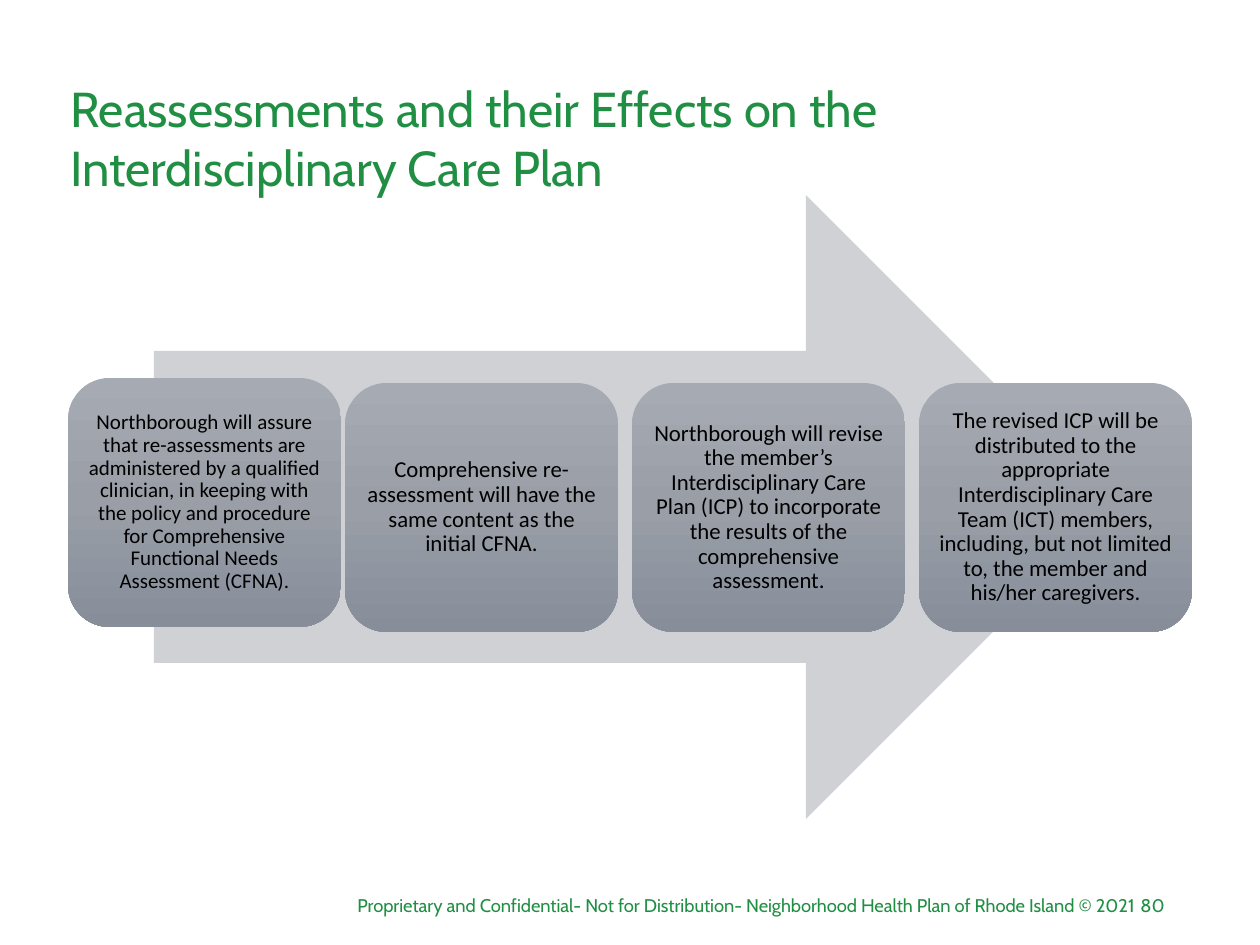
import copy

import pptx
import pptx.dml.color
import pptx.enum.shapes
import pptx.enum.text
import pptx.util
from pptx.oxml.ns import qn

PX = 914400 / 126  # EMU in one px
GREEN = "208F44"
SHAPE = pptx.enum.shapes.MSO_SHAPE
ALIGN = pptx.enum.text.PP_ALIGN
MIDDLE = pptx.enum.text.MSO_ANCHOR.MIDDLE

STEPS = [
    ("Northborough will assure that re-assessments are administered by a "
     "qualified clinician, in keeping with the policy and procedure for "
     "Comprehensive Functional Needs Assessment (CFNA).", 12, 378),
    ("Comprehensive re-assessment will have the same content as the "
     "initial CFNA.", 13, 383),
    ("Northborough will revise the member’s Interdisciplinary Care Plan (ICP) "
     "to incorporate the results of the comprehensive assessment.", 13, 383),
    ("The revised ICP will be distributed to the appropriate "
     "Interdisciplinary Care Team (ICT) members, including, but not limited "
     "to, the member and his/her caregivers.", 13, 383),
]


def px(*values):
    return [pptx.util.Emu(round(v * PX)) for v in values]


def rgb(value):
    return pptx.dml.color.RGBColor.from_string(value)


def set_font(font, name, size, color):
    font.name = name
    font.size = pptx.util.Pt(size)
    font.color.rgb = rgb(color)


def add_shape(s, kind, box):
    sp = s.shapes.add_shape(kind, *px(*box))
    sp.shadow.inherit = False
    sp.line.fill.background()
    return sp


def add_title(s, box):
    tf = s.shapes.add_textbox(*px(*box)).text_frame
    tf.word_wrap = True
    tf.vertical_anchor = MIDDLE
    p = tf.paragraphs[0]
    p.text = "Reassessments and their Effects on the\vInterdisciplinary Care Plan"
    p.line_spacing = 0.9
    for r in p.runs:
        set_font(r.font, "Cabin", 28, GREEN)
    # the larger closing space sets the height of the last line
    r = p.add_run()
    r.text = " "
    set_font(r.font, "Cabin", 32, GREEN)


def add_step(s, box, text, size):
    sp = add_shape(s, SHAPE.ROUNDED_RECTANGLE, box)

    # three-stop gradient, light at the top
    sp.fill.gradient()
    sp.fill.gradient_angle = 270
    stops = sp._element.spPr.find(".//" + qn("a:gsLst"))
    stops.insert(1, copy.deepcopy(stops[0]))
    for stop, color, position in zip(sp.fill.gradient_stops,
                                     ("A5AAB3", "999EA7", "878E9A"),
                                     (0, 0.5, 1)):
        stop.color.rgb = rgb(color)
        stop.position = position

    tf = sp.text_frame
    tf.word_wrap = True
    tf.vertical_anchor = MIDDLE
    tf.margin_left, tf.margin_top, tf.margin_right, tf.margin_bottom = px(6, 6, 6, 6)
    p = tf.paragraphs[0]
    p.text = text
    p.alignment = ALIGN.CENTER
    p.line_spacing = 0.9
    set_font(p.font, "Calibri", size, "000000")


def add_process(s, left, width, pitch, height):
    # arrow behind the steps
    arrow = add_shape(s, SHAPE.RIGHT_ARROW, (154, 195, 964, 624))
    arrow.fill.solid()
    arrow.fill.fore_color.rgb = rgb("CFD1D4")

    # the first step sits a little apart from the even row that ends at the right
    for i, (text, size, top) in enumerate(STEPS):
        x = left if i == 0 else left - 10 + i * pitch
        add_step(s, (x, top, width, height), text, size)


def add_footer(s, top, height):
    parts = [
        (1119, 58, "80"),
        (315, 833, "Proprietary and Confidential- Not for Distribution- "
                   "Neighborhood Health Plan of Rhode Island © 2021"),
    ]
    for left, width, text in parts:
        tf = s.shapes.add_textbox(*px(left, top, width, height)).text_frame
        tf.word_wrap = True
        p = tf.paragraphs[0]
        p.text = text
        p.alignment = ALIGN.RIGHT
        set_font(p.font, "Cabin", 10.5, GREEN)


def main():
    prs = pptx.Presentation()
    prs.slide_width, prs.slide_height = px(1260, 945)
    s = prs.slides.add_slide(prs.slide_layouts[6])
    add_footer(s, 888, 35)
    add_title(s, (58, 50, 1092, 183))
    add_process(s, left=68, width=273, pitch=287, height=249)
    prs.save("out.pptx")


if __name__ == "__main__":
    main()
